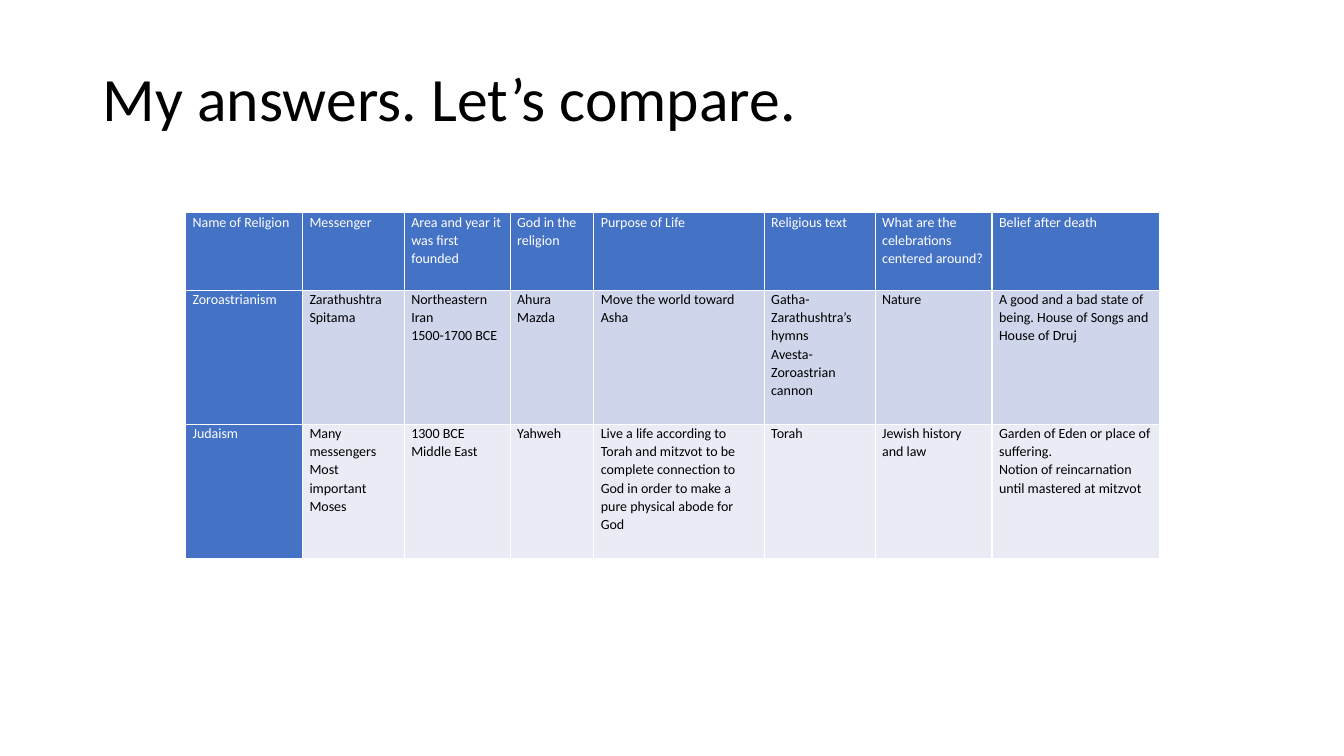
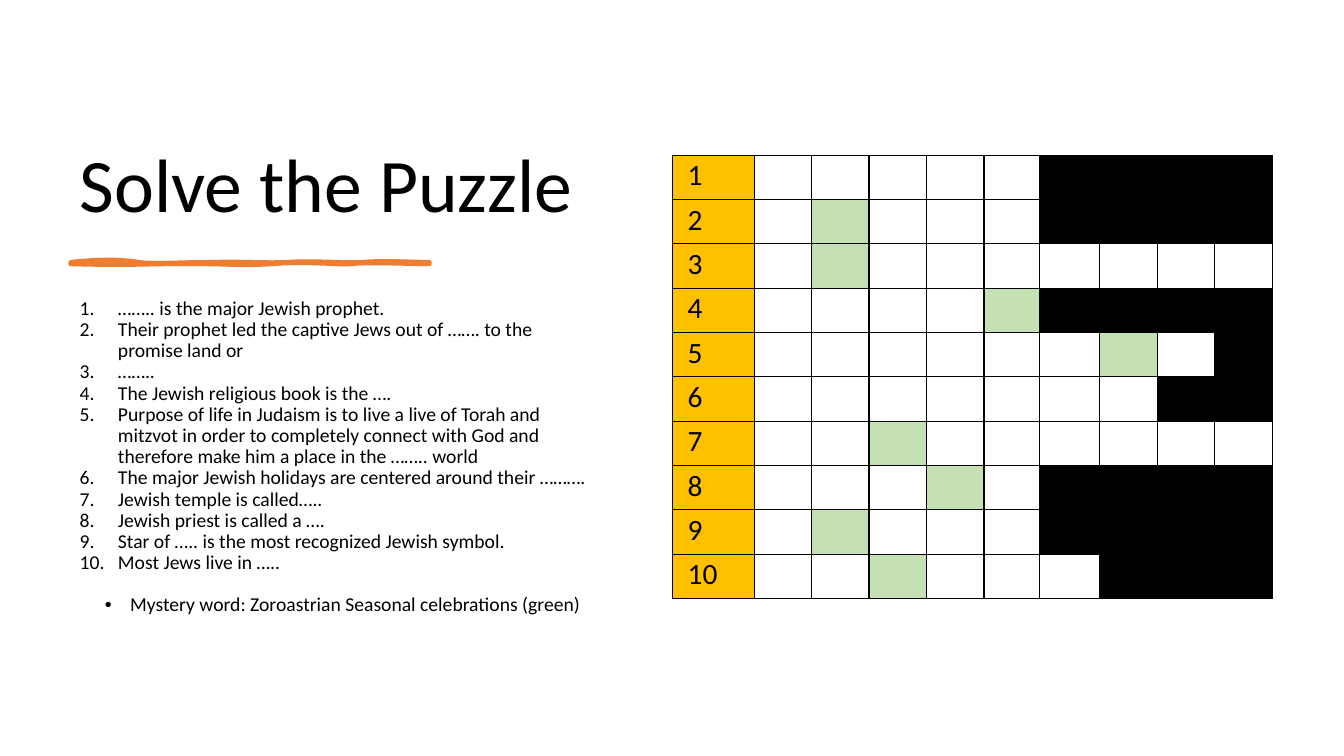
from dataclasses import dataclass

from lxml.etree import SubElement
from pptx import Presentation
from pptx.dml.color import RGBColor
from pptx.enum.text import MSO_ANCHOR, MSO_AUTO_SIZE, PP_ALIGN
from pptx.oxml import parse_xml
from pptx.oxml.ns import nsdecls, qn
from pptx.slide import Slide
from pptx.table import _Cell
from pptx.text.text import TextFrame, _Paragraph
from pptx.util import Emu, Pt

PX = 9144
FONT = "Calibri"
BLACK = RGBColor(0x00, 0x00, 0x00)
WHITE = RGBColor(0xFF, 0xFF, 0xFF)
BLUE = RGBColor(0x44, 0x72, 0xC4)
BLUE_TINT = RGBColor(0xCF, 0xD5, 0xEA)
BLUE_PALE = RGBColor(0xE9, 0xEB, 0xF5)
ORANGE = RGBColor(0xED, 0x7D, 0x31)
GOLD = RGBColor(0xFF, 0xC0, 0x00)
GREEN = RGBColor(0xC5, 0xE0, 0xB3)


@dataclass(frozen=True)
class Box:
    left: int
    top: int
    width: int
    height: int


@dataclass(frozen=True)
class CellStyle:
    fill: RGBColor
    color: RGBColor = BLACK


@dataclass(frozen=True)
class TableStyle:
    size: int
    inset: int
    border: RGBColor


@dataclass(frozen=True)
class TableCell:
    text: str
    style: CellStyle


HEADING = CellStyle(BLUE, WHITE)
RELIGION_STYLE = TableStyle(10, 7, WHITE)
PUZZLE_STYLE = TableStyle(21, 15, BLACK)

RELIGION_COLUMNS = [116, 101, 105, 83, 169, 110, 116, 166]
RELIGION_HEIGHTS = [77, 133, 133]
RELIGION_FILLS = [BLUE, BLUE_TINT, BLUE_PALE]
RELIGIONS = [
    [
        "Name of Religion", "Messenger", "Area and year it was first founded",
        "God in the religion", "Purpose of Life", "Religious text",
        "What are the celebrations centered around?", "Belief after death",
    ],
    [
        "Zoroastrianism", "Zarathushtra Spitama",
        "Northeastern Iran\n1500-1700 BCE", "Ahura Mazda",
        "Move the world toward Asha",
        "Gatha-Zarathushtra’s hymns\nAvesta- Zoroastrian cannon", "Nature",
        "A good and a bad state of being. House of Songs and House of Druj",
    ],
    [
        "Judaism", "Many messengers\nMost important\nMoses",
        "1300 BCE Middle East", "Yahweh",
        "Live a life according to Torah and mitzvot to be complete connection "
        "to God in order to make a pure physical abode for God",
        "Torah", "Jewish history and law",
        "Garden of Eden or place of suffering.\n"
        "Notion of reincarnation until mastered at mitzvot",
    ],
]

PUZZLE_COLUMNS = [81, 57, 57, 57, 57, 55, 60, 57, 57, 57]
PUZZLE_ROW_HEIGHT = 44
PUZZLE_FILLS = {".": WHITE, "G": GREEN, "#": BLACK}
PUZZLE_ROWS = [
    ".....####",
    ".G...####",
    ".G.......",
    "....G####",
    "......G.#",
    ".......##",
    "..G......",
    "...G.####",
    ".G...####",
    "..G...###",
]

CLUES = [
    "…….. is the major Jewish prophet.",
    "Their prophet led the captive Jews out of ……. to the promise land or",
    "……..",
    "The Jewish religious book is the ….",
    "Purpose of life in Judaism is to live a live of Torah and mitzvot in order "
    "to completely connect with God and therefore make him a place in the …….. world",
    "The major Jewish holidays are centered around their ……….",
    "Jewish temple is called…..",
    "Jewish priest is called a ….",
    "Star of ….. is the most recognized Jewish symbol.",
    "Most Jews live in …..",
]
MYSTERY_CLUE = "Mystery word: Zoroastrian Seasonal celebrations (green)"

STROKE_START = (70, 260)
STROKE_CURVES = [
    ((97, 257), (121, 257), (138, 260)),
    ((155, 262), (177, 260), (209, 260)),
    ((241, 259), (260, 261), (284, 260)),
    ((308, 258), (339, 261), (359, 260)),
    ((379, 258), (412, 260), (426, 260)),
    ((426, 260), (426, 261), (426, 262)),
    ((408, 262), (364, 260), (348, 262)),
    ((332, 263), (304, 259), (270, 262)),
    ((235, 264), (231, 262), (199, 262)),
    ((166, 261), (132, 264), (70, 262)),
]
CURVE_STEPS = 12


def place(shape, box: Box) -> None:
    shape.left, shape.top = Emu(box.left * PX), Emu(box.top * PX)
    shape.width, shape.height = Emu(box.width * PX), Emu(box.height * PX)


def format_text(text_frame: TextFrame, size: int, color: RGBColor, spacing: float) -> None:
    for paragraph in text_frame.paragraphs:
        paragraph.alignment = PP_ALIGN.LEFT
        paragraph.line_spacing = spacing
        paragraph.space_before = paragraph.space_after = Pt(0)
        for run in paragraph.runs:
            run.font.name = FONT
            run.font.size = Pt(size)
            run.font.bold = False
            run.font.color.rgb = color


def add_title(slide: Slide, text: str, box: Box, size: int) -> None:
    title = slide.shapes.title
    place(title, box)
    title.text_frame.text = text
    title.text_frame.word_wrap = True
    title.text_frame.auto_size = MSO_AUTO_SIZE.NONE
    title.text_frame.vertical_anchor = MSO_ANCHOR.BOTTOM
    format_text(title.text_frame, size, BLACK, 0.9)


def set_borders(cell: _Cell, color: RGBColor) -> None:
    properties = cell._tc.get_or_add_tcPr()
    for index, side in enumerate(("lnL", "lnR", "lnT", "lnB")):
        border = parse_xml(
            f'<a:{side} {nsdecls("a")} w="{Pt(1)}"><a:solidFill>'
            f'<a:srgbClr val="{color}"/></a:solidFill></a:{side}>'
        )
        properties.insert(index, border)


def fill_cell(cell: _Cell, content: TableCell, style: TableStyle) -> None:
    cell.margin_left = cell.margin_right = Emu(style.inset * PX)
    cell.margin_top = cell.margin_bottom = Emu(0)
    cell.fill.solid()
    cell.fill.fore_color.rgb = content.style.fill
    set_borders(cell, style.border)
    if content.text:
        cell.text_frame.text = content.text
        format_text(cell.text_frame, style.size, content.style.color, 1.07)


def add_grid(
    slide: Slide, left: int, top: int, widths: list[int], heights: list[int],
    rows: list[list[TableCell]], style: TableStyle,
) -> None:
    table = slide.shapes.add_table(
        len(heights), len(widths), Emu(left * PX), Emu(top * PX),
        Emu(sum(widths) * PX), Emu(sum(heights) * PX),
    ).table
    table.first_row = table.horz_banding = False
    for column, width in zip(table.columns, widths):
        column.width = Emu(width * PX)
    for row, height, contents in zip(table.rows, heights, rows):
        row.height = Emu(height * PX)
        for cell, content in zip(row.cells, contents):
            fill_cell(cell, content, style)


def set_bullet(paragraph: _Paragraph, margin: int, hanging: int, character: str = "") -> None:
    properties = paragraph._p.get_or_add_pPr()
    properties.set("marL", str(margin * PX))
    properties.set("indent", str(-hanging * PX))
    if character:
        SubElement(properties, qn("a:buFont"), typeface="Arial")
        SubElement(properties, qn("a:buChar"), char=character)
    else:
        SubElement(properties, qn("a:buFont"), typeface=FONT)
        SubElement(properties, qn("a:buAutoNum"), type="arabicPeriod")


def add_clues(slide: Slide, box: Box) -> None:
    body = slide.placeholders[1]
    place(body, box)
    text_frame = body.text_frame
    text_frame.text = "\n".join([*CLUES, MYSTERY_CLUE])
    text_frame.word_wrap = True
    text_frame.auto_size = MSO_AUTO_SIZE.NONE
    text_frame.vertical_anchor = MSO_ANCHOR.TOP
    format_text(text_frame, 14, BLACK, 0.9)
    *clues, mystery = text_frame.paragraphs
    for paragraph in clues:
        set_bullet(paragraph, 38, 38)
    mystery.space_before = Pt(15)
    set_bullet(mystery, 50, 25, "•")


def curve_points() -> list[tuple[float, float]]:
    points = []
    start = STROKE_START
    for first, second, end in STROKE_CURVES:
        for step in range(1, CURVE_STEPS + 1):
            t = step / CURVE_STEPS
            weights = ((1 - t) ** 3, 3 * t * (1 - t) ** 2, 3 * t * t * (1 - t), t ** 3)
            controls = (start, first, second, end)
            x, y = (
                PX * sum(weight * point[axis] for weight, point in zip(weights, controls))
                for axis in (0, 1)
            )
            points.append((x, y))
        start = end
    return points


def add_brush_stroke(slide: Slide) -> None:
    left, top = STROKE_START
    builder = slide.shapes.build_freeform(left * PX, top * PX)
    builder.add_line_segments(curve_points(), close=True)
    stroke = builder.convert_to_shape()
    stroke.shadow.inherit = False
    stroke.fill.solid()
    stroke.fill.fore_color.rgb = ORANGE
    stroke.line.color.rgb = ORANGE
    stroke.line.width = Pt(3)


def add_comparison_slide(presentation) -> None:
    slide = presentation.slides.add_slide(presentation.slide_layouts[5])
    add_title(slide, "My answers. Let’s compare.", Box(92, 28, 1149, 111), 44)
    rows = [
        [TableCell(texts[0], HEADING)]
        + [TableCell(text, HEADING if fill == BLUE else CellStyle(fill)) for text in texts[1:]]
        for texts, fill in zip(RELIGIONS, RELIGION_FILLS)
    ]
    add_grid(slide, 184, 211, RELIGION_COLUMNS, RELIGION_HEIGHTS, rows, RELIGION_STYLE)


def add_puzzle_slide(presentation) -> None:
    slide = presentation.slides.add_slide(presentation.slide_layouts[1])
    add_title(slide, "Solve the Puzzle", Box(69, 70, 527, 162), 54)
    add_brush_stroke(slide)
    add_clues(slide, Box(69, 291, 527, 388))
    rows = [
        [TableCell(str(number), CellStyle(GOLD))]
        + [TableCell("", CellStyle(PUZZLE_FILLS[mark])) for mark in marks]
        for number, marks in enumerate(PUZZLE_ROWS, start=1)
    ]
    heights = [PUZZLE_ROW_HEIGHT] * len(rows)
    add_grid(slide, 667, 154, PUZZLE_COLUMNS, heights, rows, PUZZLE_STYLE)


def main() -> None:
    presentation = Presentation()
    presentation.slide_width = Emu(1333 * PX)
    presentation.slide_height = Emu(750 * PX)
    add_comparison_slide(presentation)
    add_puzzle_slide(presentation)
    presentation.save("out.pptx")


if __name__ == "__main__":
    main()
